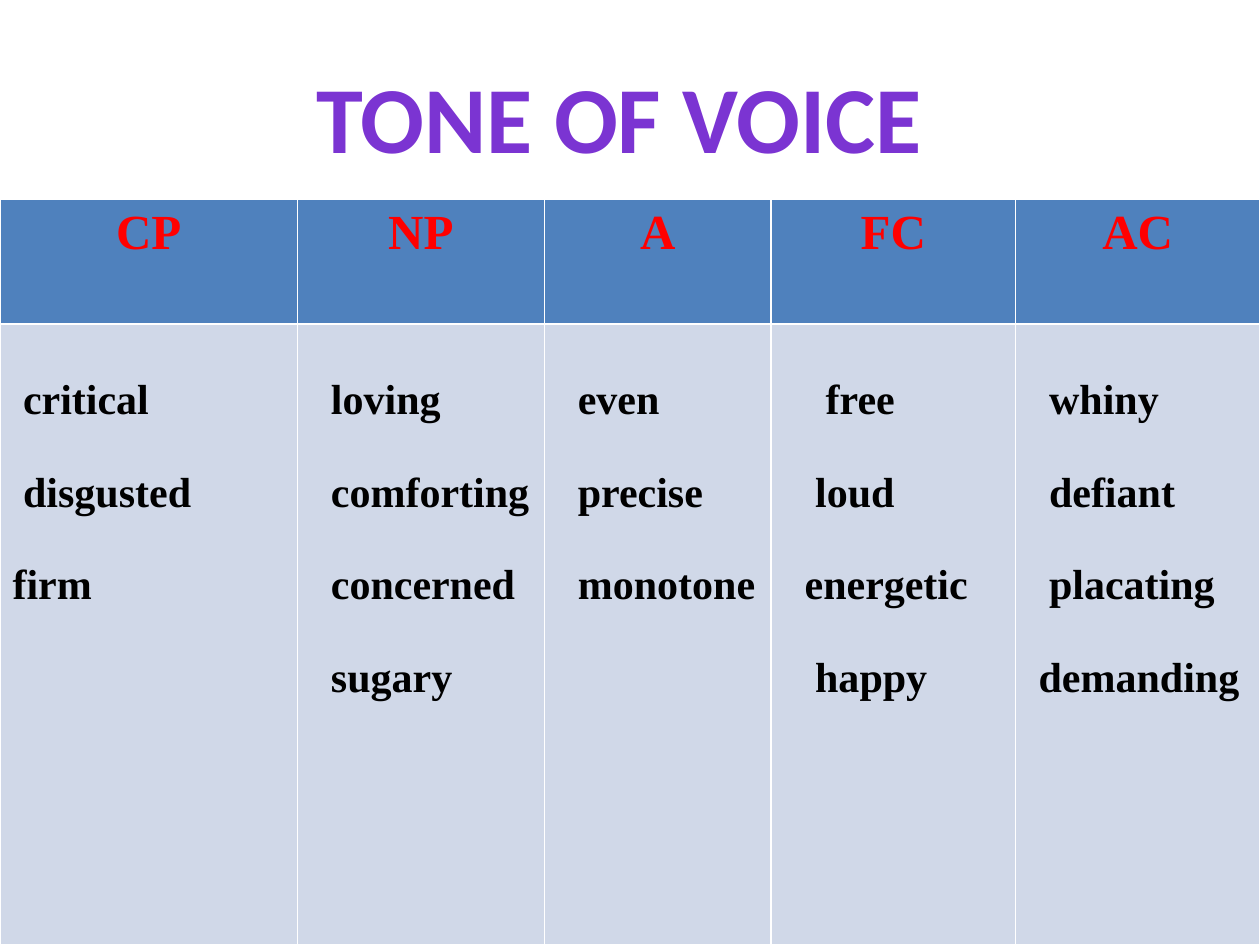
from pptx import Presentation
from pptx.dml.color import RGBColor
from pptx.enum.text import MSO_ANCHOR as Anchor, PP_ALIGN as Align
from pptx.util import Inches, Pt

SPACE = 6  # points of indent per step in the word lists

# Each column: heading, share of the slide width, (word, indent steps)
COLUMNS = [
    ("CP", 0.236, [("critical", 1), ("disgusted", 1), ("firm", 0)]),
    ("NP", 0.196, [("loving", 2), ("comforting", 2), ("concerned", 2), ("sugary", 2)]),
    ("A", 0.18, [("even", 2), ("precise", 2), ("monotone", 2)]),
    ("FC", 0.194, [("free", 4), ("loud", 3), ("energetic", 2), ("happy", 3)]),
    ("AC", 0.194, [("whiny", 2), ("defiant", 2), ("placating", 2), ("demanding", 1)]),
]
ROW_SHARES = (0.132, 0.657)


def color(hex_code):
    return RGBColor.from_string(hex_code)


class ToneSlide:
    title_font, table_font = "Calibri", "Times New Roman"
    title_color, heading_color, word_color = "7B34D2", "FF0000", "000000"
    heading_fill, body_fill = "4F81BD", "D0D8E8"

    def __init__(self, deck):
        self.width, self.height = deck.slide_width, deck.slide_height
        self.slide = deck.slides.add_slide(deck.slide_layouts[6])

    def area(self, left, top, width, height):
        """Turn shares of the slide into lengths."""
        return (int(left * self.width), int(top * self.height),
                int(width * self.width), int(height * self.height))

    def style(self, para, font, size, hex_code):
        for span in para.runs:
            span.font.name, span.font.size, span.font.bold = font, Pt(size), True
            span.font.color.rgb = color(hex_code)

    def title(self, text, *shares):
        box = self.slide.shapes.add_textbox(*self.area(*shares))
        box.text_frame.word_wrap = True
        para = box.text_frame.paragraphs[0]
        para.text, para.alignment = text, Align.CENTER
        self.style(para, self.title_font, 54, self.title_color)

    def heading(self, cell, text):
        self.fill(cell, self.heading_fill)
        para = cell.text_frame.paragraphs[0]
        para.text, para.alignment = text, Align.CENTER
        self.style(para, self.table_font, 28, self.heading_color)

    def word_list(self, cell, words):
        self.fill(cell, self.body_fill)
        cell.text_frame.text = "\n".join(word for word, _ in words)
        for para, (_, steps) in zip(cell.text_frame.paragraphs, words):
            para.line_spacing = 2.0
            para._p.get_or_add_pPr().set("marL", str(Pt(steps * SPACE)))
            self.style(para, self.table_font, 24, self.word_color)

    def fill(self, cell, hex_code):
        cell.fill.solid()
        cell.fill.fore_color.rgb = color(hex_code)
        cell.vertical_anchor = Anchor.TOP

    def table(self, columns, row_shares, top):
        frame = self.slide.shapes.add_table(
            len(row_shares), len(columns), *self.area(0, top, 1, sum(row_shares)))
        table = frame.table
        for row, share in zip(table.rows, row_shares):
            row.height = int(share * self.height)
        for index, (heading, share, words) in enumerate(columns):
            table.columns[index].width = int(share * self.width)
            self.heading(table.cell(0, index), heading)
            self.word_list(table.cell(1, index), words)


def main():
    deck = Presentation()
    deck.slide_width, deck.slide_height = Inches(10), Inches(7.5)
    page = ToneSlide(deck)
    page.table(COLUMNS, ROW_SHARES, top=0.211)
    page.title("TONE OF VOICE", 0.183, 0.056, 0.617, 0.135)
    deck.save("out.pptx")


if __name__ == "__main__":
    main()
